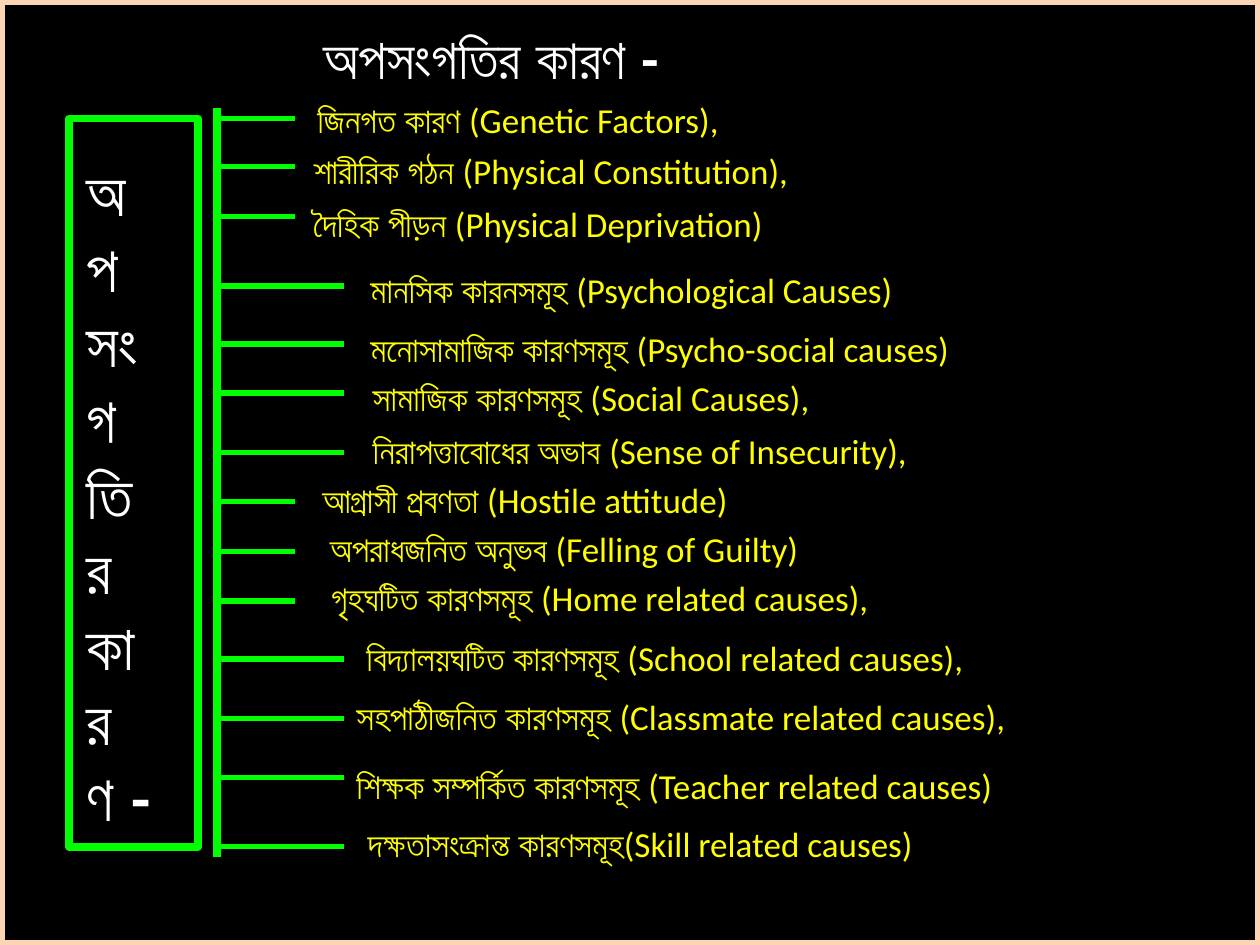
from dataclasses import dataclass

from lxml import etree
from pptx import Presentation
from pptx import util as u
from pptx.dml.color import RGBColor
from pptx.enum import shapes, text
from pptx.oxml import ns


@dataclass(frozen=True)
class Theme:
    font: str = "Calibri"
    background: str = "000000"
    heading: str = "FFFFFF"
    cause: str = "FFFF00"
    branch: str = "00FF00"
    frame: str = "FCD5B5"
    title_size: int = 32
    letter_size: int = 36
    cause_size: int = 20


def write(frame, words, size, color, font, bold=False, wrap=False):
    frame.text = words
    frame.word_wrap = wrap
    frame.auto_size = text.MSO_AUTO_SIZE.SHAPE_TO_FIT_TEXT
    frame.vertical_anchor = text.MSO_ANCHOR.TOP
    for paragraph in frame.paragraphs:
        paragraph.alignment = text.PP_ALIGN.LEFT
        style = paragraph.runs[0].font
        style.name, style.size, style.bold = font, u.Pt(size), bold
        style.color.rgb = RGBColor.from_string(color)


class Diagram:
    COLUMNS, ROWS = 100, 75

    def __init__(self, deck, theme):
        self.theme = theme
        self.column = deck.slide_width / self.COLUMNS
        self.row = deck.slide_height / self.ROWS
        self.slide = deck.slides.add_slide(deck.slide_layouts[5])
        fill = self.slide.background.fill
        fill.solid()
        fill.fore_color.rgb = RGBColor.from_string(theme.background)

    def place(self, *cells):
        return [round(cell * step) for cell, step in zip(cells, [self.column, self.row] * 2)]

    def title(self, words, *cells):
        heading = self.slide.shapes.title
        heading.left, heading.top, heading.width, heading.height = self.place(*cells)
        write(heading.text_frame, words, self.theme.title_size, self.theme.heading,
              self.theme.font, bold=True, wrap=True)

    def label(self, words, *cells, **style):
        box = self.slide.shapes.add_textbox(*self.place(*cells))
        write(box.text_frame, words, font=self.theme.font, **style)

    def outline(self, color, weight, *cells):
        border = self.slide.shapes.add_shape(shapes.MSO_SHAPE.RECTANGLE, *self.place(*cells))
        border.shadow.inherit = False
        border.fill.background()
        border.line.color.rgb = RGBColor.from_string(color)
        border.line.width = u.Pt(weight)
        etree.SubElement(border.line._get_or_add_ln(), ns.qn("a:round"))

    def branch(self, weight, *ends):
        stroke = self.slide.shapes.add_connector(shapes.MSO_CONNECTOR.STRAIGHT, *self.place(*ends))
        stroke.line.color.rgb = RGBColor.from_string(self.theme.branch)
        stroke.line.width = u.Pt(weight)
        etree.SubElement(stroke._element.spPr, ns.qn("a:effectLst"))


SYLLABLES = ["অ", "প", "সং", "গ", "তি", "র", "কা", "র", "ণ -"]
TRUNK, SHORT_END, LONG_END = 17.2, 23.4, 27.3
CAUSE_HEIGHT = 4.4
CAUSES = [
    ("জিনগত কারণ (Genetic Factors),", 24.2, 7.3, 37.7, 9.4, False),
    ("শারীরিক গঠন (Physical Constitution),", 23.9, 11.4, 44, 13.2, False),
    ("দৈহিক পীড়ন (Physical Deprivation)", 23.9, 15.6, 40.2, 17.2, False),
    ("মানসিক কারনসমূহ (Psychological Causes)", 28.4, 20.8, 48.2, 22.7, False),
    ("মনোসামাজিক কারণসমূহ (Psycho-social causes)", 28.4, 25.5, 52.9, 27.3, False),
    ("সামাজিক কারণসমূহ (Social Causes),", 28.6, 29.4, 41.3, 31.2, False),
    ("নিরাপত্তাবোধের অভাব (Sense of Insecurity),", 28.6, 33.6, 50.1, 35.9, False),
    ("আগ্রাসী প্রবণতা (Hostile attitude)", 24.6, 37.5, 37.6, 39.8, False),
    ("অপরাধজনিত অনুভব (Felling of Guilty)", 25.2, 41.4, 44.2, 43.8, False),
    ("গৃহঘটিত কারণসমূহ (Home related causes),", 25.3, 45.3, 49.4, 47.7, False),
    ("বিদ্যালয়ঘটিত কারণসমূহ (School related causes),", 28.1, 50, 55, 52.3, False),
    ("সহপাঠীজনিত কারণসমূহ (Classmate related causes),", 27.3, 54.7, 68.8, 57, True),
    ("শিক্ষক সম্পর্কিত কারণসমূহ (Teacher related causes)", 27.3, 60.2, 67.2, 61.7, True),
    ("দক্ষতাসংক্রান্ত কারণসমূহ(Skill related causes)", 28.2, 64.8, 50, 67.2, False),
]


def main():
    deck = Presentation()
    deck.slide_width, deck.slide_height = u.Inches(10), u.Inches(7.5)
    theme = Theme()
    diagram = Diagram(deck, theme)

    diagram.title("অপসংগতির কারণ -", 24.7, 1.4, 61.3, 6.4)
    diagram.outline(theme.branch, 4.5, 5.5, 9.4, 10.2, 57.8)
    diagram.label("\n".join(SYLLABLES), 5.9, 11.7, 8.9, 55.5,
                  size=theme.letter_size, color=theme.heading, bold=True)
    diagram.branch(4.5, TRUNK, 8.6, TRUNK, 68)
    for cause, left, top, width, level, wrap in CAUSES:
        end = LONG_END if left >= LONG_END else SHORT_END
        diagram.branch(3, TRUNK, level, end, level)
        diagram.label(cause, left, top, width, CAUSE_HEIGHT,
                      size=theme.cause_size, color=theme.cause, wrap=wrap)
    diagram.outline(theme.frame, 6, 0, 0, diagram.COLUMNS, diagram.ROWS)

    deck.save("out.pptx")


if __name__ == "__main__":
    main()
